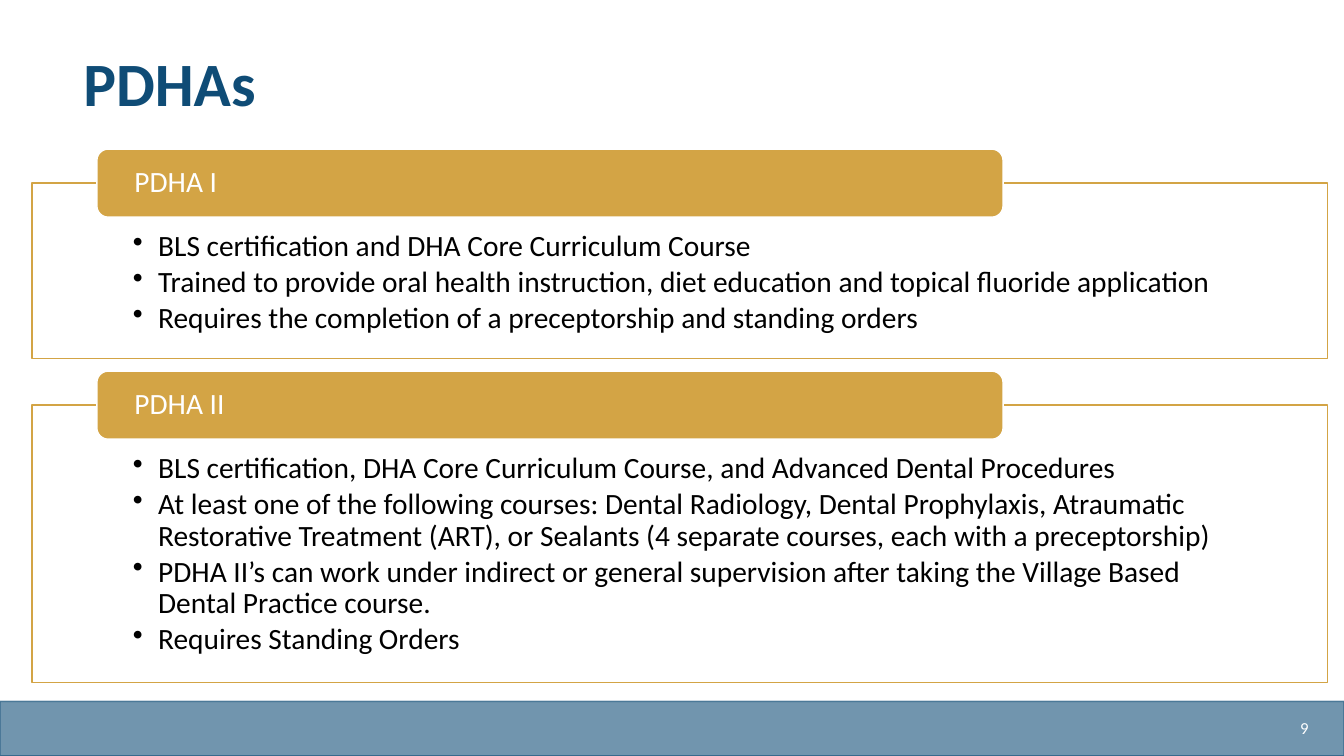
from lxml import etree
from pptx import Presentation
from pptx.dml.color import RGBColor
from pptx.enum.shapes import MSO_SHAPE
from pptx.enum.text import MSO_ANCHOR, PP_ALIGN
from pptx.oxml.ns import qn
from pptx.util import Pt

RECT, ROUNDED = MSO_SHAPE.RECTANGLE, MSO_SHAPE.ROUNDED_RECTANGLE
TOP, MIDDLE = MSO_ANCHOR.TOP, MSO_ANCHOR.MIDDLE
LEFT, RIGHT = PP_ALIGN.LEFT, PP_ALIGN.RIGHT

# Content
TITLE = "PDHAs"
PAGE_NUMBER = "9"
LEVELS = [
    ("PDHA I", 125.3, [
        "BLS certification and DHA Core Curriculum Course",
        "Trained to provide oral health instruction, diet education and topical fluoride application",
        "Requires the completion of a preceptorship and standing orders",
    ]),
    ("PDHA II", 198, [
        "BLS certification, DHA Core Curriculum Course, and Advanced Dental Procedures",
        "At least one of the following courses: Dental Radiology, Dental Prophylaxis, Atraumatic "
        "Restorative Treatment (ART), or Sealants (4 separate courses, each with a preceptorship)",
        "PDHA II’s can work under indirect or general supervision after taking the Village Based "
        "Dental Practice course.",
        "Requires Standing Orders",
    ]),
]

# Formats
NAVY, GOLD, WHITE, BLACK = "0F4C76", "D3A445", "FFFFFF", "000000"
TITLE_FONT = {"size": Pt(44), "bold": True}
BODY_FONT = {"size": Pt(21)}
NUMBER_FONT = {"size": Pt(12)}

# Layout in points
SLIDE_W, SLIDE_H = 960, 540
FOOTER_H = 39
PANEL_X, PANEL_W = 23, 925.2
HEADING_X, HEADING_W, HEADING_H = 69.2, 647.3, 48.6
FIRST_HEADING_Y = 106.5
OVERLAP = 24.3
LEVEL_GAP = 9

prs = Presentation()
prs.slide_width, prs.slide_height = Pt(SLIDE_W), Pt(SLIDE_H)
slide = prs.slides.add_slide(prs.slide_layouts[6])


def paint(color_format, color, opacity=100):
    color_format.rgb = RGBColor.from_string(color)
    if opacity < 100:
        for tone in color_format._xFill.iter(qn("a:srgbClr")):
            etree.SubElement(tone, qn("a:alpha"), val=str(opacity * 1000))


def add_block(kind, box, fill, line, fill_opacity=100, line_opacity=100):
    block = slide.shapes.add_shape(kind, *map(Pt, box))
    block.shadow.inherit = False
    block.fill.solid()
    paint(block.fill.fore_color, fill, fill_opacity)
    block.line.width = Pt(1)
    block.line.fill.solid()
    paint(block.line.fill.fore_color, line, line_opacity)
    return block


def write(shape, lines, color, font, insets=(7.2, 3.6, 7.2, 3.6), anchor=TOP,
          align=LEFT, spacing=0.9, bullets=False):
    frame = shape.text_frame
    left, top, right, bottom = map(Pt, insets)
    settings = {"word_wrap": True, "vertical_anchor": anchor, "margin_left": left,
                "margin_top": top, "margin_right": right, "margin_bottom": bottom}
    for name, value in settings.items():
        setattr(frame, name, value)
    for index, line in enumerate(lines):
        paragraph = frame.add_paragraph() if index else frame.paragraphs[0]
        paragraph.alignment, paragraph.line_spacing = align, spacing
        if bullets:
            paragraph.space_after = Pt(2.9)
            properties = paragraph._p.get_or_add_pPr()
            properties.set("marL", str(Pt(18)))
            properties.set("indent", str(-Pt(18)))
            etree.SubElement(properties, qn("a:buChar"), char="•")
        run = paragraph.add_run()
        run.text = line
        for name, value in {"name": "Calibri", **font}.items():
            setattr(run.font, name, value)
        paint(run.font.color, color)


# The run colour has its own fill, so text is always opaque
# Footer band and page number
add_block(RECT, (0, SLIDE_H - FOOTER_H, SLIDE_W, FOOTER_H), NAVY, NAVY, 59, 59)
number = slide.shapes.add_textbox(Pt(838.8), Pt(505.5), Pt(103), Pt(28.8))
write(number, [PAGE_NUMBER], WHITE, NUMBER_FONT, anchor=MIDDLE, align=RIGHT, spacing=1.0)

# Title
title = slide.shapes.add_textbox(Pt(52.5), Pt(34.5), Pt(760.3), Pt(56.2))
write(title, [TITLE], NAVY, TITLE_FONT)

# One panel with an overlapping heading per level
heading_y = FIRST_HEADING_Y
for heading, panel_h, points in LEVELS:
    panel_y = heading_y + OVERLAP
    panel = add_block(RECT, (PANEL_X, panel_y, PANEL_W, panel_h), WHITE, GOLD, 90)
    write(panel, points, BLACK, BODY_FONT, (72, 34.5, 72, 11.5), bullets=True)
    bar = add_block(ROUNDED, (HEADING_X, heading_y, HEADING_W, HEADING_H), GOLD, WHITE)
    write(bar, [heading], WHITE, BODY_FONT, (24.5, 0, 24.5, 0), MIDDLE)
    heading_y = panel_y + panel_h + LEVEL_GAP

prs.save("out.pptx")
